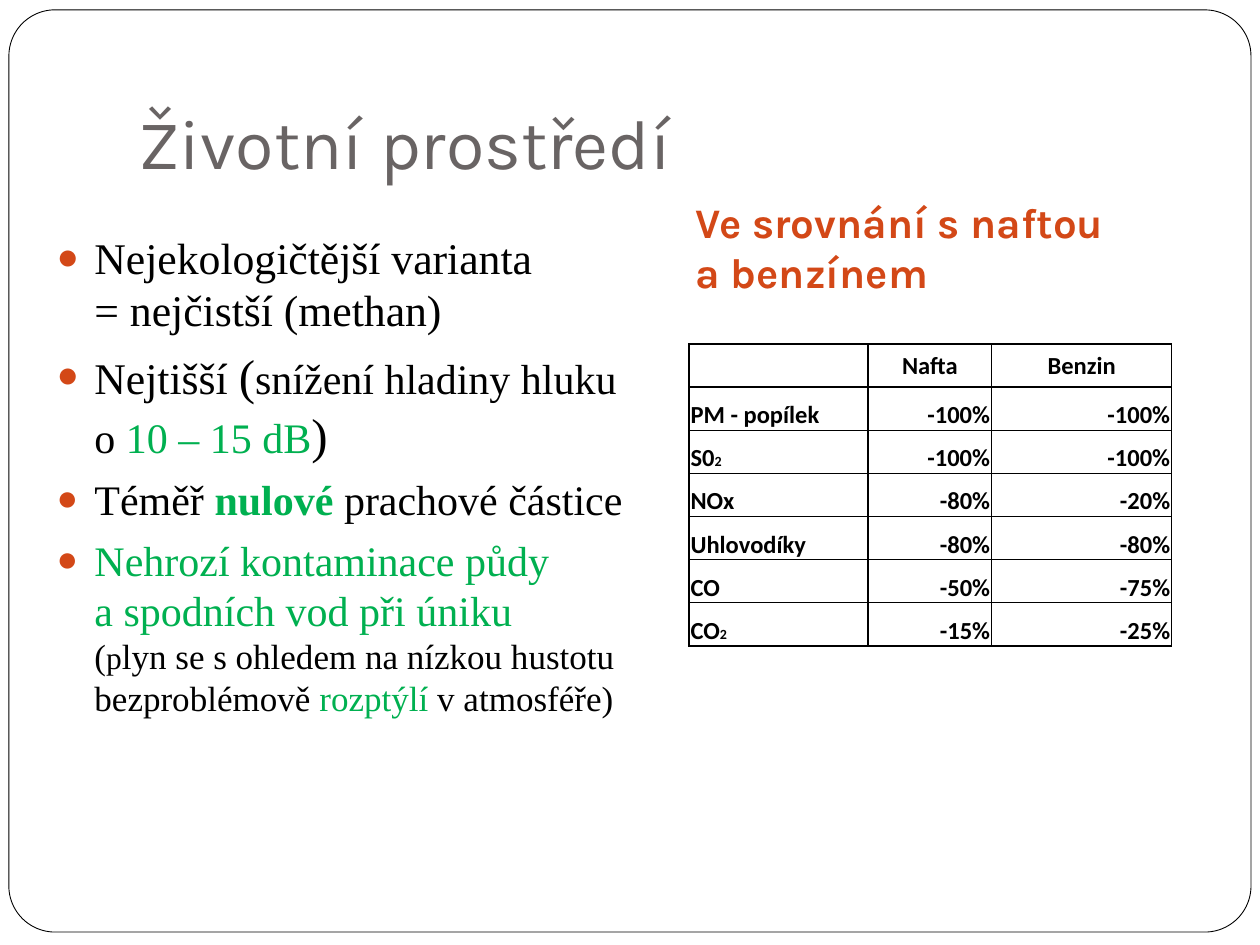
import dataclasses

import lxml.etree
import pptx
import pptx.dml.color
import pptx.enum.shapes
import pptx.enum.text
import pptx.oxml.ns
import pptx.util

Cm, Pt = pptx.util.Cm, pptx.util.Pt
Align = pptx.enum.text.PP_ALIGN
Anchor = pptx.enum.text.MSO_ANCHOR


@dataclasses.dataclass(frozen=True)
class Theme:
    black: str = "000000"
    white: str = "FFFFFF"
    gray: str = "696464"
    rust: str = "D34817"
    green: str = "00B050"
    head: str = "Karla"
    serif: str = "Times New Roman"
    sans: str = "Calibri"
    title: int = 40
    large: int = 28
    lead: int = 25
    main: int = 24
    note: int = 20
    small: int = 18
    cell: int = 14
    sub: int = 8
    gap: float = 5.8
    thin: float = 0.5
    thick: float = 1


def assign(target, values):
    for name, value in values.items():
        setattr(target, name, value)


def add_node(parent, tag, **attrs):
    return lxml.etree.SubElement(parent, pptx.oxml.ns.qn(tag), attrs)


class Page:
    def __init__(self, slide, theme):
        self.slide, self.theme = slide, theme

    def color(self, code):
        return pptx.dml.color.RGBColor.from_string(code)

    def add_text(self, para, text, size, color, font, bold=False):
        """Add text to a paragraph, with a line break at each newline."""
        for index, line in enumerate(text.split("\n")):
            if index:
                para.add_line_break()
            if line:
                run = para.add_run()
                run.text = line
                assign(run.font, {"size": Pt(size), "name": font, "bold": bold})
                run.font.color.rgb = self.color(color)

    def frame(self, box, corner):
        shape = self.slide.shapes.add_shape(
            pptx.enum.shapes.MSO_SHAPE.ROUNDED_RECTANGLE, *map(Cm, box))
        shape.adjustments[0] = corner
        shape.shadow.inherit = False
        shape.fill.solid()
        shape.fill.fore_color.rgb = self.color(self.theme.white)
        shape.line.color.rgb = self.color(self.theme.black)
        shape.line.width = Pt(self.theme.thin)
        # The frame lies behind the text
        self.slide.shapes.title.element.addprevious(shape.element)

    def holder(self, index, box, anchor):
        """Place a template placeholder and return its text frame."""
        shape = self.slide.placeholders[index]
        sides = ("left", "top", "width", "height")
        assign(shape, dict(zip(sides, map(Cm, box))))
        assign(shape.text_frame, {
            "word_wrap": True, "vertical_anchor": anchor,
            "auto_size": pptx.enum.text.MSO_AUTO_SIZE.NONE})
        return shape.text_frame

    def title(self, text, box):
        look = self.theme
        frame = self.holder(0, box, Anchor.BOTTOM)
        frame.margin_bottom = Cm(0.25)
        para = frame.paragraphs[0]
        para.alignment = Align.LEFT
        self.add_text(para, text, look.title, look.gray, look.head)

    def heading(self, text, box):
        look = self.theme
        para = self.holder(2, box, Anchor.BOTTOM).paragraphs[0]
        para.space_before = Pt(look.gap)
        props = para._p.get_or_add_pPr()
        props.attrib.update({"marL": "0", "indent": "0"})
        add_node(props, "a:buNone")
        self.add_text(para, text, look.main, look.rust, look.head, True)

    def bullets(self, items, box):
        look = self.theme
        frame = self.holder(1, box, Anchor.TOP)
        hang = Cm(0.76)
        for index, item in enumerate(items):
            para = frame.add_paragraph() if index else frame.paragraphs[0]
            para.space_before = Pt(look.gap)
            props = para._p.get_or_add_pPr()
            props.attrib.update({"marL": str(hang), "indent": str(-hang)})
            add_node(add_node(props, "a:buClr"), "a:srgbClr", val=look.rust)
            add_node(props, "a:buSzPct", val="85000")
            add_node(props, "a:buChar", char="●")
            for text, size, color, *bold in item:
                self.add_text(para, text, size, color, look.serif, *bold)

    def borders(self, cell, widths):
        props = cell._tc.get_or_add_tcPr()
        for index, (side, width) in enumerate(widths.items()):
            line = add_node(props, f"a:ln{side}", w=str(Pt(width)))
            fill = add_node(line, "a:solidFill")
            add_node(fill, "a:srgbClr", val=self.theme.black)
            props.insert(index, line)

    def table(self, rows, spot, widths, height):
        look = self.theme
        last = len(rows)
        table = self.slide.shapes.add_table(
            last, len(widths), *map(Cm, spot),
            Cm(sum(widths)), Cm(height * last)).table
        assign(table, {"first_row": False, "horz_banding": False})
        for column, width in zip(table.columns, widths):
            column.width = Cm(width)
        across = [look.thick] * 2 + [look.thin] * (last - 2) + [look.thick]
        upright = [look.thick, look.thick, look.thin, look.thick]
        pad = Cm(0.03)
        for r, row in enumerate(rows):
            table.rows[r].height = Cm(height)
            for c, text in enumerate(row):
                cell = table.cell(r, c)
                assign(cell, {
                    "margin_left": pad, "margin_right": pad,
                    "margin_top": pad, "margin_bottom": 0,
                    "vertical_anchor": Anchor.BOTTOM if r else Anchor.MIDDLE})
                cell.fill.background()
                self.borders(cell, {"L": upright[c], "R": upright[c + 1],
                                    "T": across[r], "B": across[r + 1]})
                para = cell.text_frame.paragraphs[0]
                side = Align.RIGHT if c else Align.LEFT
                para.alignment = side if r else Align.CENTER
                base, _, sub = text.partition("_")
                for part, size in ((base, look.cell), (sub, look.sub)):
                    self.add_text(para, part, size, look.black, look.sans, True)


def main():
    deck = pptx.Presentation()
    assign(deck, {"slide_width": Cm(25.4), "slide_height": Cm(19.05)})
    look = Theme()
    page = Page(deck.slides.add_slide(deck.slide_layouts[3]), look)
    black, green = look.black, look.green

    page.frame((0.18, 0.2, 25.04, 18.59), 0.05)
    page.title("Životní prostředí", (2.54, 0.76, 21.59, 3.18))
    page.heading("Ve srovnání s naftou \na benzínem", (13.77, 4.01, 9.93, 2.11))
    page.bullets([
        [("Nejekologičtější varianta \n= nejčistší (methan)", look.lead, black)],
        [("Nejtišší ", look.lead, black), ("(", look.large, black),
         ("snížení hladiny hluku o ", look.main, black),
         ("10 – 15 dB", look.main, green), (")", look.large, black)],
        [("Téměř ", look.main, black), ("nulové", look.main, green, True),
         (" prachové částice", look.main, black)],
        [("Nehrozí kontaminace půdy \na spodních vod při úniku \n",
          look.main, green),
         ("(", look.note, black), ("p", look.small, black),
         ("lyn se s ohledem na nízkou hustotu bezproblémově ", look.note, black),
         ("rozptýlí", look.note, green), (" v atmosféře)", look.note, black)],
    ], (0.89, 4.52, 12.01, 12.52))
    # An underscore starts a small index
    page.table([
        ("", "Nafta", "Benzin"),
        ("PM - popílek", "-100%", "-100%"),
        ("S0_2", "-100%", "-100%"),
        ("NOx", "-80%", "-20%"),
        ("Uhlovodíky", "-80%", "-80%"),
        ("CO", "-50%", "-75%"),
        ("CO_2", "-15%", "-25%"),
    ], (13.89, 6.93), (3.61, 2.49, 3.63), 0.87)
    deck.save("out.pptx")


if __name__ == "__main__":
    main()
